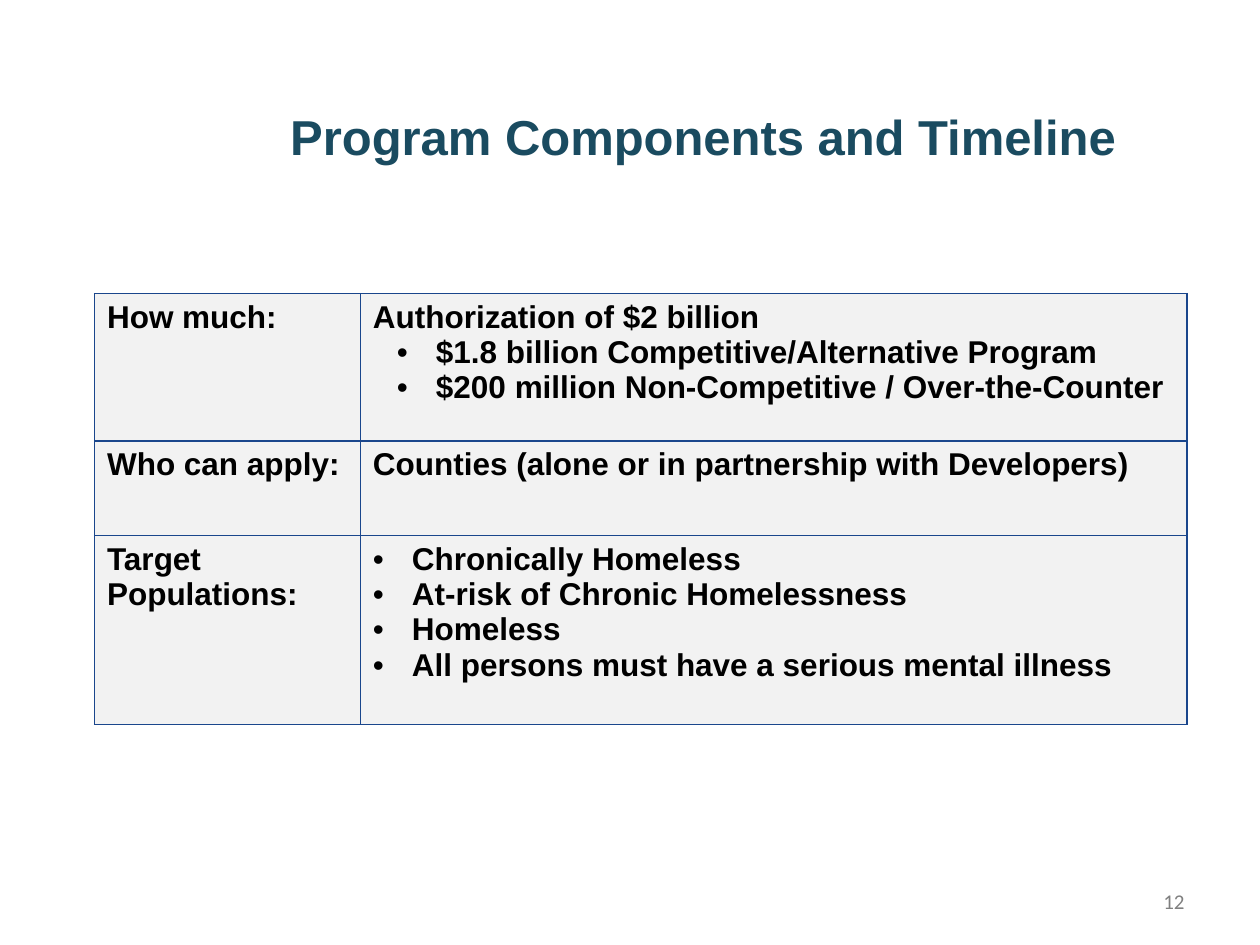
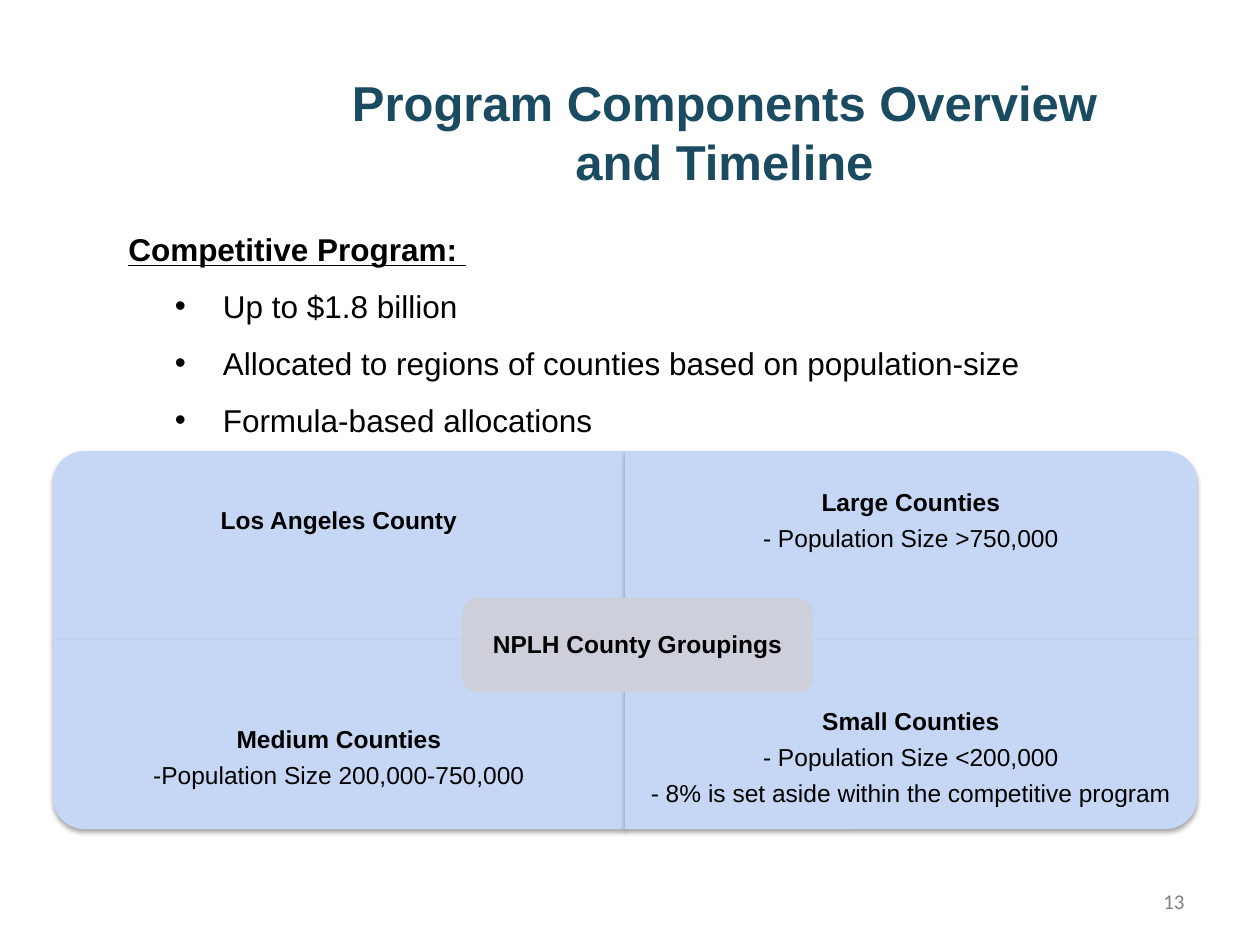
from dataclasses import dataclass

from lxml import etree
from pptx import Presentation
from pptx.dml.color import RGBColor
from pptx.enum.shapes import MSO_SHAPE
from pptx.enum.text import MSO_ANCHOR, PP_ALIGN
from pptx.oxml.ns import qn
from pptx.util import Inches, Pt

CENTER, RIGHT, LEFT = PP_ALIGN.CENTER, PP_ALIGN.RIGHT, PP_ALIGN.LEFT
MIDDLE, TOP = MSO_ANCHOR.MIDDLE, MSO_ANCHOR.TOP
ROUND_ONE, ROUND_ALL = MSO_SHAPE.ROUND_1_RECTANGLE, MSO_SHAPE.ROUNDED_RECTANGLE


@dataclass(frozen=True)
class Theme:
    title: str = "1A4B60"
    text: str = "000000"
    muted: str = "808080"
    cell: str = "F2F2F2"
    border: str = "1A468C"
    quadrant: str = "C5D7F4"
    hub: str = "CDCFDA"
    font: str = "Arial"
    number_font: str = "Calibri"
    title_size: int = 28
    body_size: int = 18
    label_size: int = 14
    number_size: int = 12


THEME = Theme()


def set_all(target, values):
    for name, value in values.items():
        setattr(target, name, value)


def add_child(parent, tag, **attributes):
    return etree.SubElement(parent, qn(tag), attributes)


def add_bullet(para, indent, hanging):
    properties = para._p.get_or_add_pPr()
    properties.set("marL", str(Inches(indent)))
    properties.set("indent", str(-Inches(hanging)))
    add_child(properties, "a:buFont", typeface="Arial")
    add_child(properties, "a:buChar", char="•")


def write_para(frame, index, text, size, color=THEME.text, font=THEME.font,
               bullet=None, layout=None, **style):
    """Write one paragraph; bullet is (indent, hanging) in inches."""
    para = frame.paragraphs[0] if index == 0 else frame.add_paragraph()
    set_all(para, layout or {})
    if bullet:
        add_bullet(para, *bullet)
    span = para.add_run()
    span.text = text
    set_all(span.font, {"name": font, "size": Pt(size), **style})
    span.font.color.rgb = RGBColor.from_string(color)


def add_box(page, box, anchor=MIDDLE, margin=None):
    frame = page.shapes.add_textbox(*map(Inches, box)).text_frame
    set_all(frame, {"word_wrap": True, "vertical_anchor": anchor})
    if margin is not None:
        for side in ("left", "top", "right", "bottom"):
            setattr(frame, f"margin_{side}", Inches(margin))
    return frame


def add_page(deck, title_lines, title_box, number):
    """Start a page with its title and page number."""
    page = deck.slides.add_slide(deck.slide_layouts[6])
    frame = add_box(page, title_box, margin=0)
    for index, line in enumerate(title_lines):
        write_para(frame, index, line, THEME.title_size, THEME.title,
                   layout={"alignment": CENTER}, bold=True)
    write_para(add_box(page, (7.17, 6.95, 2.33, 0.4)), 0, str(number),
               THEME.number_size, THEME.muted, THEME.number_font,
               layout={"alignment": RIGHT})
    return page


# Table of program facts
def style_cell(cell):
    properties = cell._tc.get_or_add_tcPr()
    for side in ("L", "R", "T", "B"):
        line = add_child(properties, f"a:ln{side}", w=str(Pt(1)))
        add_child(add_child(line, "a:solidFill"), "a:srgbClr", val=THEME.border)
    cell.fill.solid()
    cell.fill.fore_color.rgb = RGBColor.from_string(THEME.cell)


def add_facts(page, box, widths, heights, facts):
    table = page.shapes.add_table(len(facts), len(widths), *map(Inches, box)).table
    set_all(table, {"first_row": False, "horz_banding": False})
    for column, width in zip(table.columns, widths):
        column.width = Inches(width)
    for row, height, (label, lines) in zip(table.rows, heights, facts):
        row.height = Inches(height)
        for cell, entries in zip(row.cells, ([(label, None)], lines)):
            style_cell(cell)
            for index, (text, bullet) in enumerate(entries):
                write_para(cell.text_frame, index, text, THEME.body_size,
                           bullet=bullet, bold=True)


def build_facts_page(deck):
    page = add_page(deck, ["Program Components and Timeline"],
                    (1.33, 0.33, 8.5, 1.5), 12)
    outer, inner = (0.31, 0.31), (0.5, 0.31)
    facts = [
        ("How much:", [
            ("Authorization of $2 billion", None),
            ("$1.8 billion Competitive/Alternative Program", inner),
            ("$200 million Non-Competitive / Over-the-Counter", inner)]),
        ("Who can apply:", [
            ("Counties (alone or in partnership with Developers)", None)]),
        ("Target Populations:", [
            ("Chronically Homeless", outer),
            ("At-risk of Chronic Homelessness", outer),
            ("Homeless", outer),
            ("All persons must have a serious mental illness", outer)]),
    ]
    add_facts(page, (0.75, 2.33, 8.67, 3.42), (2.11, 6.56), (1.17, 0.75, 1.5), facts)


# Heading with bullets
def add_summary(page, box, heading, points):
    frame = add_box(page, box, TOP)
    layout = {"line_spacing": 1.5}
    write_para(frame, 0, heading, THEME.body_size, layout=layout,
               bold=True, underline=True)
    for index, point in enumerate(points, 1):
        write_para(frame, index, point, THEME.body_size, bullet=(0.75, 0.38),
                   layout=layout)


# Four county groups around a hub
def add_panel(page, kind, box, color, rotation=0):
    left, top, width, height = box
    if rotation % 180:
        left, top = left + (width - height) / 2, top + (height - width) / 2
        width, height = height, width
    panel = page.shapes.add_shape(kind, *map(Inches, (left, top, width, height)))
    panel.rotation = rotation
    panel.fill.solid()
    panel.fill.fore_color.rgb = RGBColor.from_string(color)
    panel.line.fill.background()
    panel.shadow.inherit = False
    return panel


def add_shadow(panel):
    effects = panel._element.spPr.find(qn("a:effectLst"))
    shadow = add_child(effects, "a:outerShdw", blurRad=str(Pt(3.1)),
                       dist=str(Pt(1.8)), dir="5400000", rotWithShape="0")
    color = add_child(shadow, "a:srgbClr", val="000000")
    add_child(color, "a:alpha", val="35000")


def add_label(page, box, lines, margin):
    frame = add_box(page, box, margin=margin)
    layout = {"alignment": CENTER, "line_spacing": 0.9, "space_after": Pt(5.5)}
    for index, line in enumerate(lines):
        write_para(frame, index, line, THEME.label_size, layout=layout,
                   bold=index == 0)


def add_groups(page, box, hub, groups):
    left, top, width, height = box
    wide, high, label_high = width / 2, height / 2, 1.12
    # Each panel turns its one round corner outward
    for index, (rotation, lines) in enumerate(zip((270, 0, 180, 90), groups)):
        row, column = divmod(index, 2)
        x, y = left + column * wide, top + row * high
        add_shadow(add_panel(page, ROUND_ONE, (x, y, wide, high),
                             THEME.quadrant, rotation))
        add_label(page, (x, y + row * (high - label_high), wide, label_high),
                  lines, 0.11)
    hub_wide, hub_high = 2.78, 0.75
    hub_box = (left + wide - hub_wide / 2 + 0.1, top + high - hub_high / 2 + 0.04,
               hub_wide, hub_high)
    add_panel(page, ROUND_ALL, hub_box, THEME.hub)
    add_label(page, hub_box, [hub], 0.06)


def build_groups_page(deck):
    page = add_page(deck, ["Program Components Overview", "and Timeline"],
                    (1.5, 0.42, 8.5, 1.25), 13)
    add_summary(page, (0.92, 1.63, 8.42, 2.37), "Competitive Program: ", [
        "Up to $1.8 billion",
        "Allocated to regions of counties based on population-size",
        "Formula-based allocations"])
    add_groups(page, (0.42, 3.58, 9.08, 3), "NPLH County Groupings", [
        ["Los Angeles County"],
        ["Large Counties", "- Population Size >750,000"],
        ["Medium Counties", "-Population Size 200,000-750,000"],
        ["Small Counties", "- Population Size <200,000",
         "- 8% is set aside within the competitive program"]])


def main():
    deck = Presentation()
    set_all(deck, {"slide_width": Inches(10), "slide_height": Inches(7.5)})
    build_facts_page(deck)
    build_groups_page(deck)
    deck.save("out.pptx")


if __name__ == "__main__":
    main()
